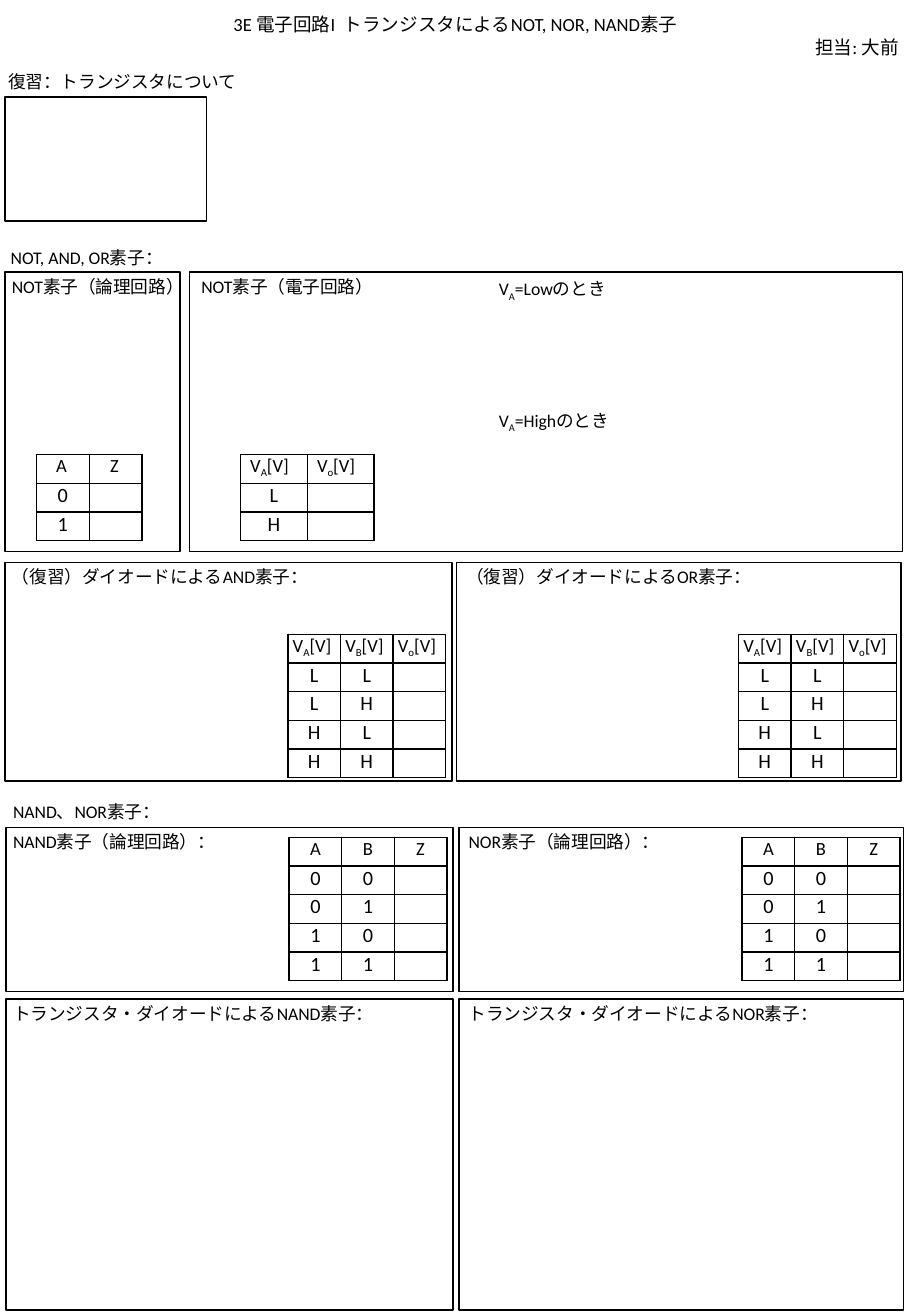
from lxml import etree
from pptx import Presentation
from pptx.dml.color import RGBColor
from pptx.enum.shapes import MSO_SHAPE
from pptx.enum.text import MSO_ANCHOR, MSO_AUTO_SIZE, PP_ALIGN
from pptx.oxml.ns import qn
from pptx.util import Pt

RECT = MSO_SHAPE.RECTANGLE
TOP = MSO_ANCHOR.TOP
NO_FIT = MSO_AUTO_SIZE.NONE
LEFT, CENTER, RIGHT = PP_ALIGN.LEFT, PP_ALIGN.CENTER, PP_ALIGN.RIGHT

# Content: lengths in px, 100 px to the inch; text between ~ marks is subscript
PX = 9144
PAGE = (750, 1083)
FONT, BLACK, WHITE = "Calibri", "000000", "FFFFFF"
TITLE_BOX = (0, 6, 750, 47)
TITLE = [("3E 電子回路I  トランジスタによるNOT, NOR, NAND素子", CENTER),
         ("担当: 大前", RIGHT)]

FRAMES = [
    (156, 224, 587, 230), (4, 224, 144, 230), (4, 80, 166, 102),
    (4, 463, 368, 180), (376, 463, 366, 180),
    (5, 681, 368, 135), (378, 681, 366, 135),
    (5, 822, 368, 256), (378, 822, 366, 256),
]

LABELS = [  # left, top, width, text
    (-3, 53, 750, "復習：トランジスタについて"),
    (-1, 198, 186, "NOT, AND, OR素子："),
    (0, 222, 186, "NOT素子（論理回路）"),
    (156, 222, 186, "NOT素子（電子回路）"),
    (401, 224, 186, "V~A~=Lowのとき"),
    (401, 332, 186, "V~A~=Highのとき"),
    (0, 461, 294, "（復習）ダイオードによるAND素子："),
    (374, 461, 267, "（復習）ダイオードによるOR素子："),
    (1, 654, 641, "NAND、NOR素子："),
    (1, 679, 197, "NAND素子（論理回路）："),
    (376, 679, 267, "NOR素子（論理回路）："),
    (1, 820, 341, "トランジスタ・ダイオードによるNAND素子："),
    (376, 820, 362, "トランジスタ・ダイオードによるNOR素子："),
]
LABEL_H = 28

VOLTS_1 = ["V~A~[V]", "V~o~[V]"]
VOLTS_2 = ["V~A~[V]", "V~B~[V]", "V~o~[V]"]
BITS_1, BITS_2 = ["A", "Z"], ["A", "B", "Z"]
TABLES = [  # left, top, width, height, header, low and high symbols
    (198, 374, 110, 71, VOLTS_1, "LH"),
    (30, 374, 87, 71, BITS_1, "01"),
    (237, 522, 130, 118, VOLTS_2, "LH"),
    (608, 522, 130, 118, VOLTS_2, "LH"),
    (238, 689, 130, 118, BITS_2, "01"),
    (611, 689, 130, 118, BITS_2, "01"),
]


def px(*lengths):
    return [round(n * PX) for n in lengths]


def color(value):
    return RGBColor.from_string(value)


def write(p, text, size, align=LEFT):
    p.alignment = align
    for i, part in enumerate(text.split("~")):
        r = p.add_run()
        r.text = part
        for name, value in {"name": FONT, "size": Pt(size)}.items():
            setattr(r.font, name, value)
        r.font.color.rgb = color(BLACK)
        if i % 2:
            r.font._element.set("baseline", "-25000")


def set_borders(cell):
    tcPr = cell._tc.get_or_add_tcPr()
    for side in ("a:lnL", "a:lnR", "a:lnT", "a:lnB"):
        ln = etree.SubElement(tcPr, qn(side), w=str(Pt(1)))
        fill = etree.SubElement(ln, qn("a:solidFill"))
        etree.SubElement(fill, qn("a:srgbClr"), val=BLACK)


def truth_rows(inputs, symbols):
    """All input combinations in counting order, with an empty output."""
    for n in range(2 ** inputs):
        yield [symbols[n >> k & 1] for k in reversed(range(inputs))] + [""]


def add_truth_table(s, left, top, width, height, header, symbols):
    rows = [header, *truth_rows(len(header) - 1, symbols)]
    table = s.shapes.add_table(len(rows), len(header),
                               *px(left, top, width, height)).table
    table.first_row = table.horz_banding = False
    for col in table.columns:
        col.width = px(width / len(header))[0]
    head_insets = (8, 10) if len(header) == 2 else (4, 4)
    for i, row in enumerate(rows):
        table.rows[i].height = px(height / len(rows))[0]
        for j, text in enumerate(row):
            cell = table.cell(i, j)
            cell.margin_left, cell.margin_right = px(*(head_insets if i == 0 else (0, 0)))
            cell.margin_top = cell.margin_bottom = 0
            set_borders(cell)
            cell.fill.background()
            p = cell.text_frame.paragraphs[0]
            if text:
                write(p, text, 12 if i else 11, LEFT if "~" in text else CENTER)
            else:
                etree.SubElement(p._p, qn("a:endParaRPr"), sz="1200")


prs = Presentation()
prs.slide_width, prs.slide_height = px(*PAGE)
s = prs.slides.add_slide(prs.slide_layouts[5])

# Title and teacher
title = s.shapes.title
title.left, title.top, title.width, title.height = px(*TITLE_BOX)
tf = title.text_frame
for name, value in {"word_wrap": True, "auto_size": NO_FIT, "vertical_anchor": TOP}.items():
    setattr(tf, name, value)
for i, (text, align) in enumerate(TITLE):
    write(tf.add_paragraph() if i else tf.paragraphs[0], text, 11, align)

# Frames
for box in FRAMES:
    sp = s.shapes.add_shape(RECT, *px(*box))
    sp.shadow.inherit = False
    sp.fill.solid()
    sp.fill.fore_color.rgb = color(WHITE)
    sp.line.color.rgb = color(BLACK)
    sp.line.width = Pt(1)

# Labels
for left, top, width, text in LABELS:
    tf = s.shapes.add_textbox(*px(left, top, width, LABEL_H)).text_frame
    tf.word_wrap = True
    write(tf.paragraphs[0], text, 10.5)

# Truth tables
for spec_row in TABLES:
    add_truth_table(s, *spec_row)

prs.save("out.pptx")
